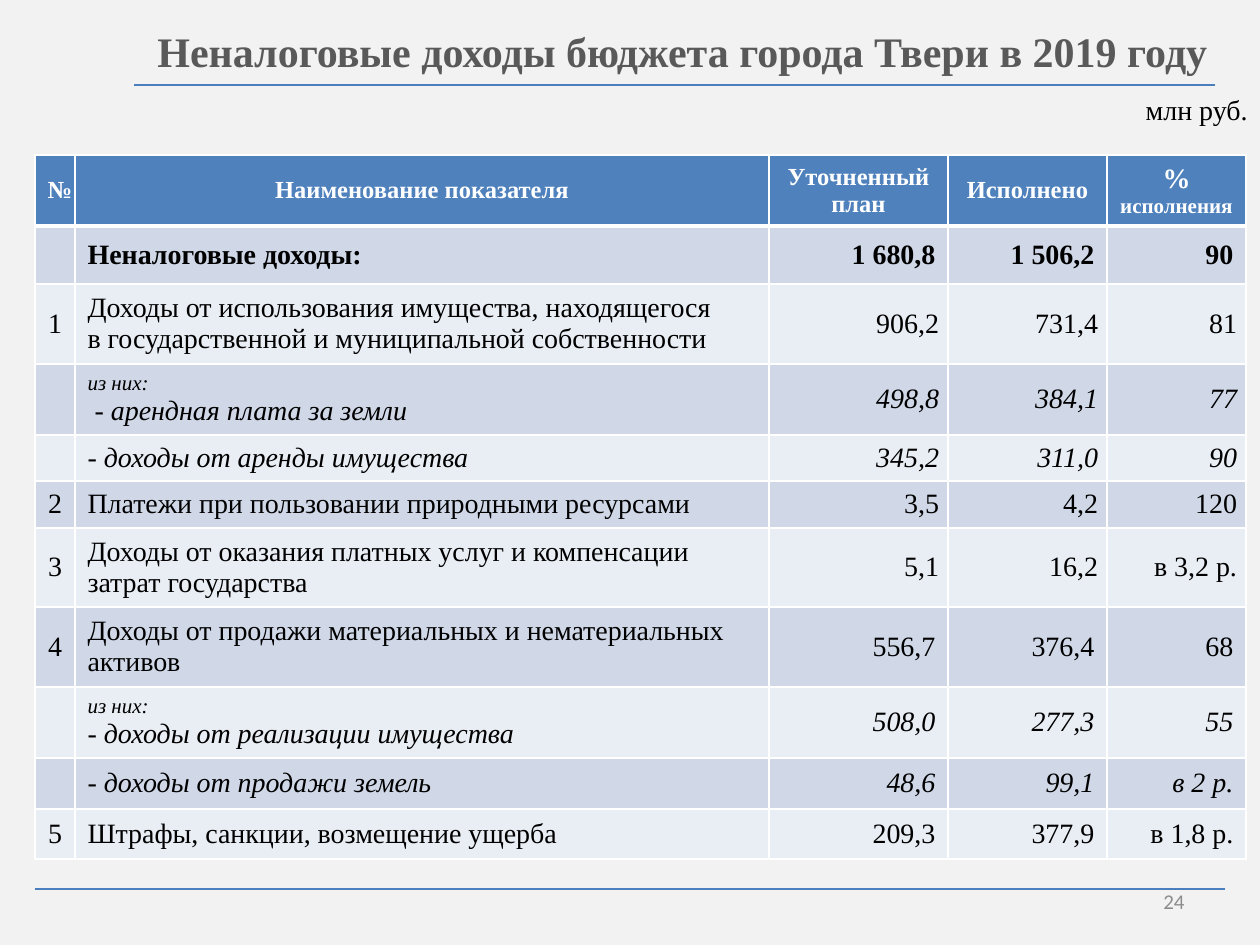
"""Build the slide on the non-tax revenue of the city budget."""
import pptx
import pptx.dml.color
import pptx.enum.shapes
import pptx.enum.text
import pptx.oxml.ns
import pptx.util
import lxml.etree

Pt = pptx.util.Pt
Align = pptx.enum.text.PP_ALIGN
Mid = pptx.enum.text.MSO_ANCHOR.MIDDLE
LEFT, MID, RIGHT = Align.LEFT, Align.CENTER, Align.RIGHT

COLS = [40, 694, 179, 159, 139]
HIGH = [71, 58, 80, 71, 46, 47, 79, 80, 71, 51, 50]
HEAD = ["№", "Наименование показателя", "Уточненный план", "Исполнено", "% "]
ROWS = [
    ["", "Неналоговые доходы:", "1 680,8", "1 506,2", "90"],
    ["1", "Доходы от использования имущества, находящегося\n"
     "в государственной и муниципальной собственности", "906,2", "731,4", "81"],
    ["", "из них:\n - арендная плата за земли", "498,8", "384,1", "77"],
    ["", "- доходы от аренды имущества", "345,2", "311,0", "90"],
    ["2", "Платежи при пользовании природными ресурсами", "3,5", "4,2", "120"],
    ["3", "Доходы от оказания платных услуг и компенсации затрат государства",
     "5,1", "16,2", "в 3,2 р."],
    ["4", "Доходы от продажи материальных и нематериальных активов",
     "556,7", "376,4", "68"],
    ["", "из них:\n- доходы от реализации имущества", "508,0", "277,3", "55"],
    ["", "- доходы от продажи земель", "48,6", "99,1", "в 2 р."],
    ["5", "Штрафы, санкции, возмещение ущерба", "209,3", "377,9", "в 1,8 р."],
]
SUBS = {3, 4, 8, 9}
TIGHT = range(2, 7)


def px(num):
    return round(num * 914400 / 126)


def paint(text):
    return pptx.dml.color.RGBColor.from_string(text)


class Page:
    """Holds the style and the current slide."""

    face = "Times New Roman"
    rule = "4B7EBC"
    fills = ["E9EDF4", "D0D8E8"]

    def __init__(self, deck):
        self.slide = deck.slides.add_slide(deck.slide_layouts[5])
        back = self.slide.background.fill
        back.solid()
        back.fore_color.rgb = paint("F2F2F2")

    def put(self, frame, text, size, color="000000", align=LEFT,
            bold=False, slant=False, face=None):
        frame.text = text
        frame.word_wrap = True
        for para in frame.paragraphs:
            para.alignment = align
            font = para.font
            font.name, font.size = face or self.face, Pt(size)
            font.bold, font.italic = bold, slant
            font.color.rgb = paint(color)

    def title(self, text, left, top, width, height):
        shape = self.slide.shapes.title
        shape.left, shape.top = px(left), px(top)
        shape.width, shape.height = px(width), px(height)
        shape.text_frame.vertical_anchor = Mid
        self.put(shape.text_frame, text, 24, "595959", MID, bold=True)

    def label(self, text, left, top, width, height, size, **style):
        box = self.slide.shapes.add_textbox(px(left), px(top), px(width), px(height))
        box.text_frame.vertical_anchor = Mid
        self.put(box.text_frame, text, size, align=RIGHT, **style)

    def line(self, left, right, top):
        kind = pptx.enum.shapes.MSO_CONNECTOR.STRAIGHT
        item = self.slide.shapes.add_connector(
            kind, px(left), px(top), px(right), px(top))
        item.line.color.rgb = paint(self.rule)
        item.line.width = Pt(0.75)
        prop = item._element.spPr
        lxml.etree.SubElement(prop, pptx.oxml.ns.qn("a:effectLst"))

    def edge(self, cell, row):
        name = pptx.oxml.ns.qn
        prop = cell._tc.get_or_add_tcPr()
        thick = {"lnT": row == 1, "lnB": row == 0}
        for side in ("lnL", "lnR", "lnT", "lnB"):
            wide = Pt(3 if thick.get(side) else 1)
            line = lxml.etree.SubElement(prop, name("a:" + side), w=str(int(wide)))
            fill = lxml.etree.SubElement(line, name("a:solidFill"))
            lxml.etree.SubElement(fill, name("a:srgbClr"), val="FFFFFF")

    def cell(self, cell, text, row, col):
        self.edge(cell, row)
        cell.fill.solid()
        cell.fill.fore_color.rgb = paint(self.fills[row % 2] if row else "4F81BD")
        cell.vertical_anchor = Mid
        cell.margin_top = cell.margin_bottom = 0
        if row in TIGHT and col > 1:
            cell.margin_left = cell.margin_right = px(9)
        if row == 0:
            self.put(cell.text_frame, text, 14, "FFFFFF", MID, bold=True)
            return
        align = [MID, LEFT, RIGHT, RIGHT, RIGHT][col]
        if (row, col) == (2, 1):
            align = Align.JUSTIFY
        self.put(cell.text_frame, text, 16, align=align,
                 bold=row == 1, slant=row in SUBS and col > 0)
        if text.startswith("из них"):
            cell.text_frame.paragraphs[0].font.size = Pt(12)

    def table(self, rows, left, top):
        grid = self.slide.shapes.add_table(
            len(rows), len(COLS), px(left), px(top), px(sum(COLS)), px(sum(HIGH))).table
        for col, width in zip(grid.columns, COLS):
            col.width = px(width)
        for row, height in zip(grid.rows, HIGH):
            row.height = px(height)
        for row, texts in enumerate(rows):
            for col, text in enumerate(texts):
                self.cell(grid.cell(row, col), text, row, col)
        para = grid.cell(0, 4).text_frame.paragraphs[0]
        para.runs[0].font.size = Pt(16)
        tail = para.add_run()
        tail.text = "исполнения"
        tail.font.size = Pt(12)


def main():
    deck = pptx.Presentation()
    deck.slide_width, deck.slide_height = px(1260), px(945)
    page = Page(deck)
    page.label("млн руб.", 1116, 86, 144, 47, 16)
    page.line(134, 1215, 85)
    page.table([HEAD] + ROWS, 35, 155)
    page.title("Неналоговые доходы бюджета города Твери в 2019 году",
               105, 16, 1155, 69)
    page.line(35, 1225, 889)
    page.label("24", 903, 876, 294, 50, 12, color="8C8C8C", face="Calibri")
    deck.save("out.pptx")


if __name__ == "__main__":
    main()
